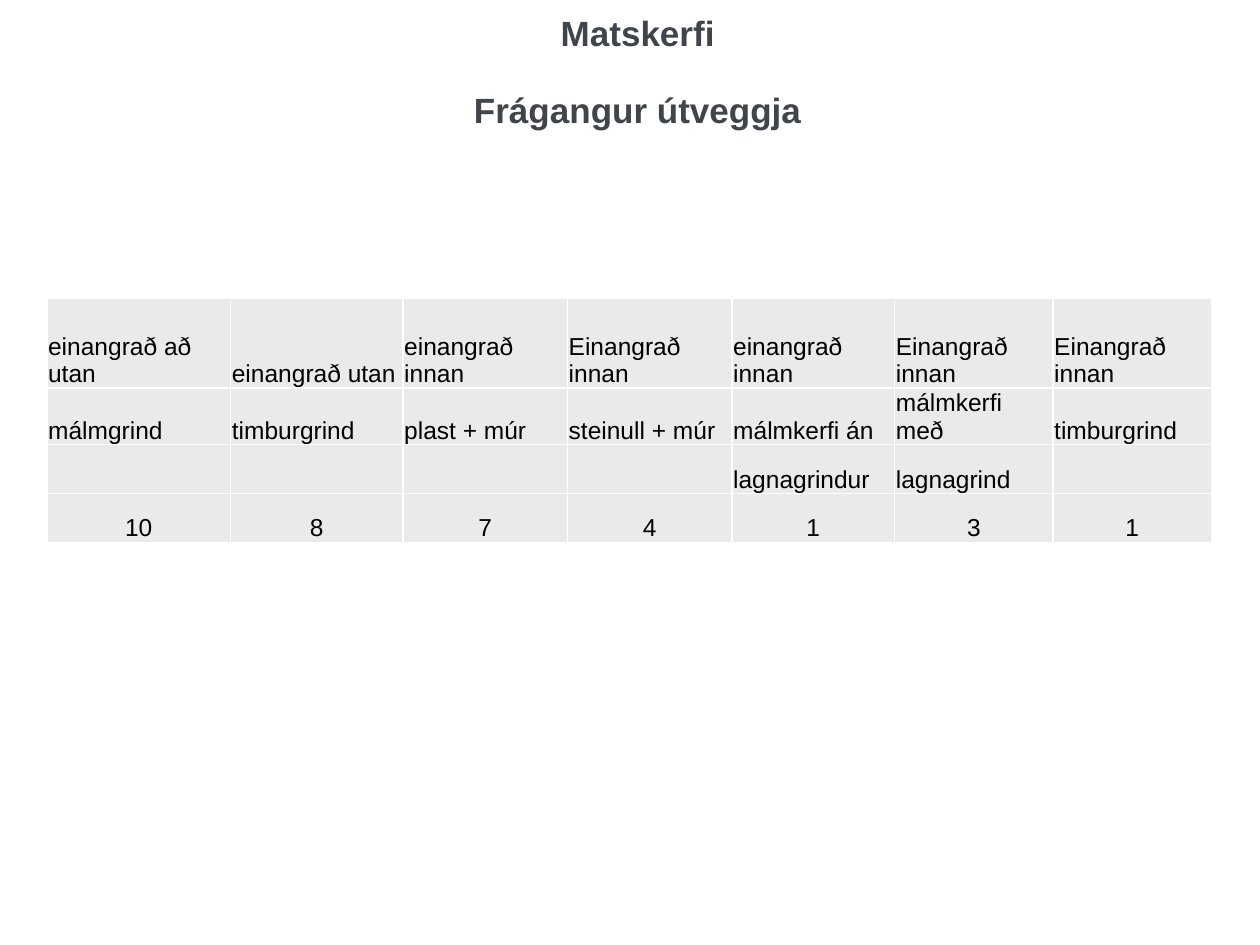
from lxml import etree
from pptx import Presentation
from pptx import util as u
from pptx.dml.color import RGBColor
from pptx.enum import text as t
from pptx.oxml.ns import qn

MID, LEFT = t.PP_ALIGN.CENTER, t.PP_ALIGN.LEFT
WIDTHS = [105, 98.5, 94, 94, 93, 90.5, 90.5]
HEIGHTS = [51, 28, 28, 28]
ROWS = [
    ["einangrað að utan", "einangrað utan", "einangrað innan", "Einangrað innan",
     "einangrað innan", "Einangrað innan", "Einangrað innan"],
    ["málmgrind", "timburgrind", "plast + múr", "steinull + múr",
     "málmkerfi án", "málmkerfi með", "timburgrind"],
    ["", "", "", "", "lagnagrindur", "lagnagrind", ""],
    ["10", "8", "7", "4", "1", "3", "1"],
]


def paint(code):
    return RGBColor.from_string(code)


def write(frame, words, size, color, bold=False, align=LEFT, line=None, gap=0):
    """Fill a text frame, one paragraph per line of words."""
    for i, part in enumerate(words.split("\n")):
        para = frame.add_paragraph() if i else frame.paragraphs[0]
        para.alignment = align
        if line:
            para.line_spacing = line
        para.space_before = u.Pt(gap if i else 0)
        if part:
            run = para.add_run()
            run.text = part
            font = run.font
            font.name, font.size, font.bold = "Arial", u.Pt(size), bold
            font.color.rgb = paint(color)


class Deck:
    ink, dark, fill, rule = "000000", "3F454B", "EAEAEB", "FFFFFF"

    def __init__(self):
        self.show = Presentation()
        self.show.slide_width, self.show.slide_height = u.Pt(720), u.Pt(540)
        self.page = self.show.slides.add_slide(self.show.slide_layouts[5])

    def title(self, words, x, y, w, h):
        box = self.page.shapes.title
        box.left, box.top, box.width, box.height = map(u.Pt, (x, y, w, h))
        frame = box.text_frame
        frame.word_wrap, frame.auto_size = True, t.MSO_AUTO_SIZE.NONE
        frame.vertical_anchor = t.MSO_ANCHOR.TOP
        frame.margin_left = frame.margin_top = 0
        frame.margin_right, frame.margin_bottom = u.Pt(7.2), u.Pt(3.6)
        write(frame, words, 20, self.dark, bold=True, align=MID, line=0.9, gap=22)

    def border(self, cell):
        props = cell._tc.get_or_add_tcPr()
        for i, side in enumerate(("lnL", "lnR", "lnT", "lnB")):
            edge = etree.Element(qn(f"a:{side}"), w=str(u.Pt(1)))
            solid = etree.SubElement(edge, qn("a:solidFill"))
            etree.SubElement(solid, qn("a:srgbClr"), val=self.rule)
            props.insert(i, edge)

    def cell(self, cell, words):
        cell.fill.solid()
        cell.fill.fore_color.rgb = paint(self.fill)
        cell.vertical_anchor = t.MSO_ANCHOR.BOTTOM
        cell.margin_left = cell.margin_right = cell.margin_top = u.Pt(0.72)
        cell.margin_bottom = 0
        write(cell.text_frame, words, 14, self.ink,
              align=MID if words.isdigit() else LEFT)
        self.border(cell)

    def table(self, rows, x, y, widths, heights):
        grid = self.page.shapes.add_table(
            len(rows), len(widths), u.Pt(x), u.Pt(y),
            u.Pt(sum(widths)), u.Pt(sum(heights))).table
        grid.first_row = grid.horz_banding = False
        for col, w in zip(grid.columns, widths):
            col.width = u.Pt(w)
        for row, h, words in zip(grid.rows, heights, rows):
            row.height = u.Pt(h)
            for cell, word in zip(row.cells, words):
                self.cell(cell, word)


def main():
    deck = Deck()
    # Heading
    deck.title("Matskerfi\nFrágangur útveggja", 44, 9.5, 648, 86.5)
    # Scores for each wall finish
    deck.table(ROWS, 26.8, 170.7, WIDTHS, HEIGHTS)
    deck.show.save("out.pptx")


if __name__ == "__main__":
    main()
